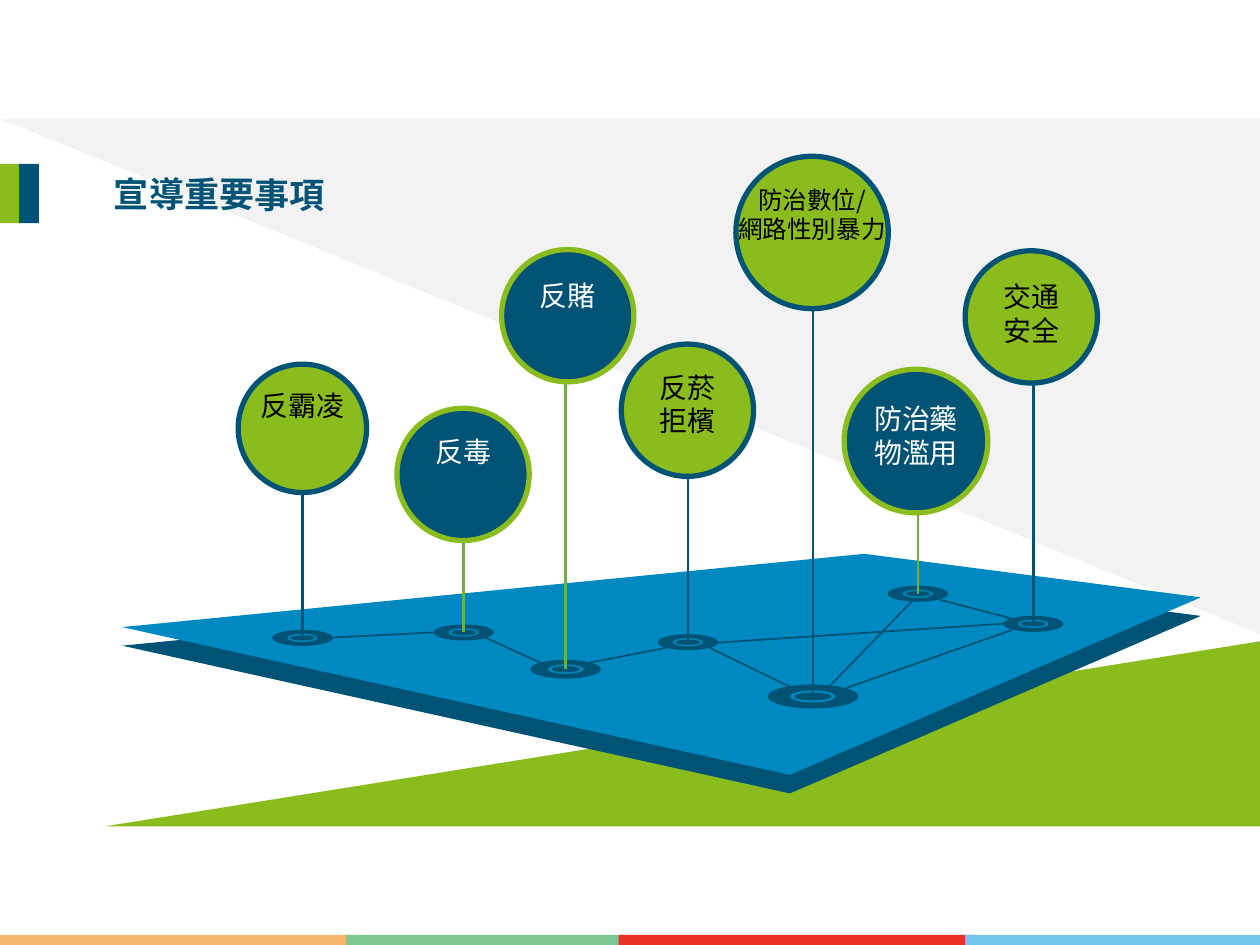
from lxml.etree import SubElement as sub
from pptx import Presentation
from pptx.dml.color import RGBColor as RGB
from pptx.enum.shapes import MSO_CONNECTOR as CONN, MSO_SHAPE as SHAPE
from pptx.enum.text import MSO_ANCHOR as ANCHOR, PP_ALIGN as ALIGN
from pptx.oxml.ns import qn
from pptx.util import Pt

FONT = "Noto Sans CJK KR"
NAVY, BLUE, GREEN, LEAF = "005374", "0089C0", "8ABC1D", "70AD47"
WHITE, BLACK = "FFFFFF", "000000"

# left, width, colour
BAR = [(0, 203.8, "F7B76F"), (198, 161.3, "7BC893"),
       (353.5, 204.5, "EB3025"), (551.5, 168.5, "73C6E9")]
PLANE = [(69.8, 358.4), (493.9, 316.5), (686.2, 341.4), (451.4, 442.8)]
LINKS = [
    (190.1, 364.3, 247.7, 361.4), (277.2, 364.3, 308.9, 378.7),
    (337, 378.7, 380.9, 370.1), (405.4, 370.1, 455.8, 394.6),
    (483.8, 393.1, 578.2, 360), (578.2, 353.5, 537.1, 342.7),
    (410.4, 367.2, 573.1, 356.4), (473.8, 392.4, 521.3, 343.4),
]
# hub (centre x, y, width), ball (left, top, size), words, text top, font size, dark
PINS = [
    ((265, 361.4, 34.6), (226.8, 233.3, 75.6), ["反毒"], 244.8, 16, True),
    ((172.8, 364.5, 34.6), (136.1, 208.1, 73.4), ["反霸凌"], 218.2, 16, False),
    ((393.1, 367, 34.6), (355, 196.6, 75.6), ["反菸", "拒檳"], 208.1, 16, False),
    ((590.4, 356.5, 34.6), (551.5, 143.3, 75.6), ["交通", "安全"], 156.2, 16, False),
    ((464.6, 398, 51.8), (420.5, 89.3, 87.1), ["防治數位/", "網路性別暴力"], 102.2, 14, False),
    ((323.3, 382.4, 40.3), (286.6, 142.6, 75.6), ["反賭"], 155.5, 16, True),
    ((524.5, 339.3, 34.6), (482.4, 211, 82.1), ["防治藥", "物濫用"], 226.1, 16, True),
]


def rgb(code):
    return RGB.from_string(code)


def paint(shape, fill, edge=None, width=0):
    shape.shadow.inherit = False
    shape.fill.solid()
    shape.fill.fore_color.rgb = rgb(fill)
    if edge:
        shape.line.color.rgb = rgb(edge)
        shape.line.width = Pt(width)
    else:
        shape.line.fill.background()
    return shape


def block(slide, kind, box, fill, edge=None, width=0):
    shape = slide.shapes.add_shape(kind, *map(Pt, box))
    return paint(shape, fill, edge, width)


def sheet(slide, drop, fill):
    first, *rest = [(Pt(x), Pt(y + drop)) for x, y in PLANE]
    build = slide.shapes.build_freeform(*first)
    build.add_line_segments(rest, close=True)
    paint(build.convert_to_shape(), fill)


def line(slide, ends, color, width):
    link = slide.shapes.add_connector(CONN.STRAIGHT, *map(Pt, ends))
    link.line.color.rgb = rgb(color)
    link.line.width = Pt(width)
    sub(link._element.spPr, qn("a:effectLst"))
    return link


def write(frame, words, size, color, bold=False):
    frame.word_wrap = False
    for i, word in enumerate(words):
        para = frame.paragraphs[0] if i == 0 else frame.add_paragraph()
        para.alignment = ALIGN.CENTER
        run = para.add_run()
        run.text = word
        font = run.font
        font.size, font.bold, font.name = Pt(size), bold, FONT
        font.color.rgb = rgb(color)
        sub(run._r.get_or_add_rPr(), qn("a:ea"), typeface=FONT)


def head(slide, text):
    title = slide.shapes.title
    title.left, title.top, title.width, title.height = map(Pt, (57.6, 95, 135.4, 31.7))
    title.rotation = 0.3
    title.text_frame.vertical_anchor = ANCHOR.MIDDLE
    write(title.text_frame, [text], 20, NAVY, True)
    # Bring the title in front of the backdrop
    slide.shapes._spTree.append(title._element)


def hub(slide, x, y, wide):
    high = wide * 0.265
    for part, depth, fill in [(1, 1, NAVY), (0.5, 0.5, BLUE), (0.41, 0.33, NAVY)]:
        w, h = wide * part, high * depth
        block(slide, SHAPE.OVAL, (x - w / 2, y - h / 2, w, h), fill)


def pin(slide, base, ball, words, top, size, dark):
    x, y, _ = base
    left, high, side = ball
    fill, edge, stem, ink = (NAVY, GREEN, LEAF, WHITE) if dark else (GREEN, NAVY, NAVY, BLACK)
    line(slide, (x, y, x, high + side / 2), stem, 1.5)
    block(slide, SHAPE.OVAL, (left, high, side, side), fill, edge, 3)
    wide = max(map(len, words)) * size + 14.4
    tall = len(words) * size * 1.2 + 7.2
    box = (left + side / 2 - wide / 2, top, wide, tall)
    label = slide.shapes.add_textbox(*map(Pt, box))
    write(label.text_frame, words, size, ink)


def back(slide):
    for left, wide, fill in BAR:
        block(slide, SHAPE.RECTANGLE, (left, 534.2, wide, 5.8), fill)
    gray = block(slide, SHAPE.RIGHT_TRIANGLE, (0, 67.7, 720, 294.5), "F2F2F2")
    gray.rotation = 180
    hill = block(slide, SHAPE.RIGHT_TRIANGLE, (59.8, 366.5, 660.2, 105.8), GREEN)
    hill._element.spPr.find(qn("a:xfrm")).set("flipH", "1")


def main():
    prs = Presentation()
    prs.slide_width, prs.slide_height = Pt(720), Pt(540)
    slide = prs.slides.add_slide(prs.slide_layouts[5])
    back(slide)
    sheet(slide, 10.6, NAVY)
    sheet(slide, 0, BLUE)
    for base, *_ in PINS:
        hub(slide, *base)
    for ends in LINKS:
        line(slide, ends, NAVY, 1)
    for left, fill in [(0, GREEN), (10.9, "00517A")]:
        block(slide, SHAPE.RECTANGLE, (left, 93.6, 11.4, 33.9), fill)
    head(slide, "宣導重要事項")
    for item in PINS:
        pin(slide, *item)
    prs.save("out.pptx")


if __name__ == "__main__":
    main()
